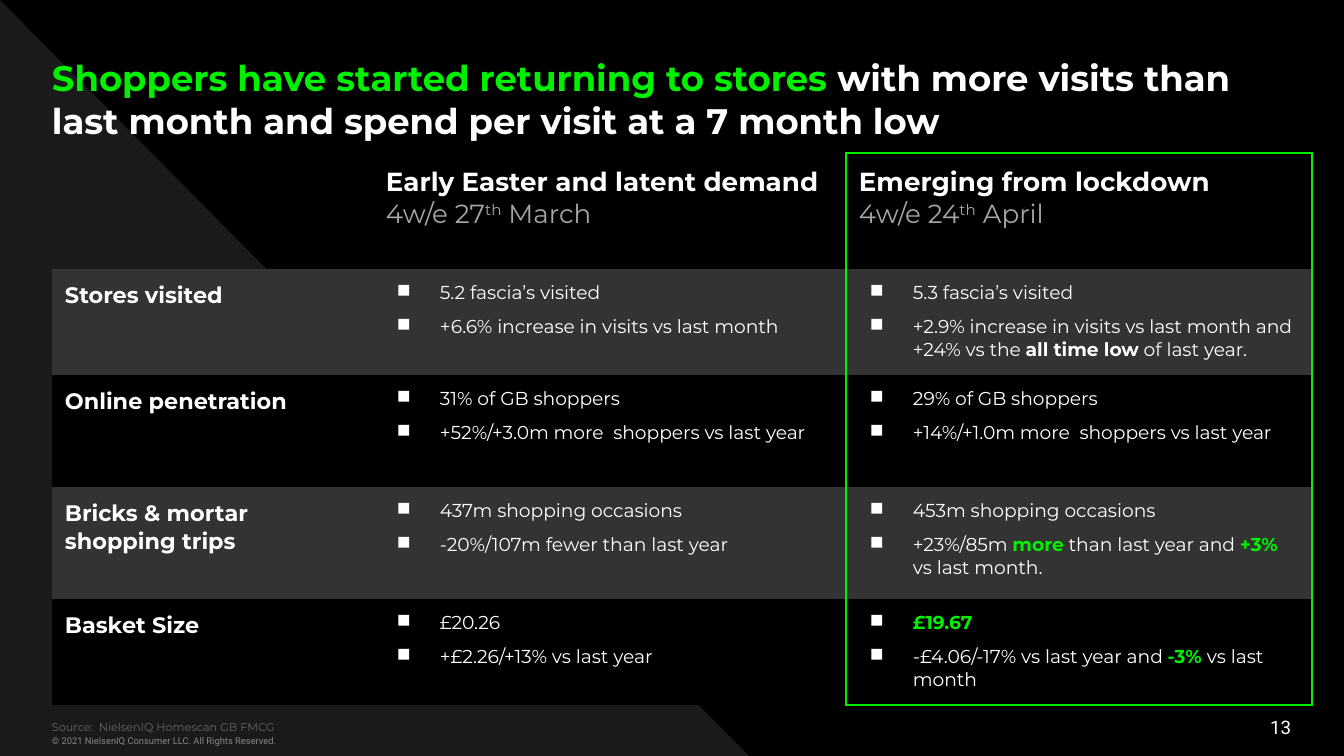
import lxml.etree
import pptx
import pptx.dml.color
import pptx.enum.shapes
import pptx.enum.text
import pptx.oxml.ns
import pptx.util

RGB = pptx.dml.color.RGBColor
BLACK = RGB(0x00, 0x00, 0x00)
WHITE = RGB(0xFF, 0xFF, 0xFF)
GREEN = RGB(0x00, 0xF0, 0x00)
CHARCOAL = RGB(0x1A, 0x1A, 0x1A)
BAND = RGB(0x33, 0x33, 0x33)
SOURCE_GREY = RGB(0x66, 0x66, 0x66)
COPYRIGHT_GREY = RGB(0x88, 0x88, 0x88)
DATE_GREY = RGB(0xA6, 0xA6, 0xA6)

ANCHOR = pptx.enum.text.MSO_ANCHOR
ALIGN = pptx.enum.text.PP_ALIGN
EMU_PER_PX = 914400 / 134.4
NO_STYLE_NO_GRID = "{2D5ABB26-0587-4C30-8999-92F81FD0307C}"

STYLES = {
    "title": {"name": "Montserrat", "size": 19, "bold": True, "color": WHITE},
    "title green": {"name": "Montserrat", "size": 19, "bold": True, "color": GREEN},
    "heading": {"name": "Montserrat", "size": 14, "bold": True, "color": WHITE},
    "date": {"name": "Montserrat", "size": 14, "bold": False, "color": DATE_GREY},
    "ordinal": {"name": "Montserrat", "size": 14, "bold": False, "color": DATE_GREY,
                "baseline": 30000},
    "label": {"name": "Montserrat", "size": 12, "bold": True, "color": WHITE},
    "body": {"name": "Montserrat", "size": 10, "bold": False, "color": WHITE},
    "strong": {"name": "Montserrat", "size": 10, "bold": True, "color": WHITE},
    "green": {"name": "Montserrat", "size": 10, "bold": True, "color": GREEN},
    "source": {"name": "Montserrat", "size": 6, "color": SOURCE_GREY},
    "copyright": {"name": "Roboto", "size": 5, "color": COPYRIGHT_GREY},
    "number": {"name": "Roboto", "size": 10, "color": WHITE},
}

# Each text: place (left, top, width, height), vertical inset, anchor, alignment, spans
TEXTS = [
    ((52, 730, 745, 27), 7, ANCHOR.TOP, ALIGN.LEFT,
     [("© 2021 NielsenIQ Consumer LLC. All Rights Reserved.", "copyright")]),
    ((989, 707, 302, 40), 7, ANCHOR.MIDDLE, ALIGN.RIGHT, [("13", "number")]),
    ((52, 714, 1199, 27), 13, ANCHOR.BOTTOM, ALIGN.LEFT,
     [("Source:  NielsenIQ Homescan GB FMCG", "source")]),
    ((52, 43, 1239, 99), 13, ANCHOR.TOP, ALIGN.LEFT,
     [("Shoppers have started returning to stores ", "title green"),
      ("with more visits than last month and spend per visit at a 7 month low", "title")]),
]

PERIODS = [
    ("Early Easter and latent demand", "4w/e 27", " March"),
    ("Emerging from lockdown", "4w/e 24", " April"),
]

# Each measure: label, bullets for the first period, bullets for the second
MEASURES = [
    ("Stores visited",
     [[("5.2 fascia’s visited", "body")],
      [("+6.6% increase in visits vs last month", "body")]],
     [[("5.3 fascia’s visited", "body")],
      [("+2.9% increase in visits vs last month and +24% vs the ", "body"),
       ("all time low", "strong"), (" of last year.", "body")]]),
    ("Online penetration",
     [[("31% of GB shoppers", "body")],
      [("+52%/+3.0m more  shoppers vs last year", "body")]],
     [[("29% of GB shoppers", "body")],
      [("+14%/+1.0m more  shoppers vs last year", "body")]]),
    ("Bricks & mortar shopping trips",
     [[("437m shopping occasions", "body")],
      [("-20%/107m fewer than last year", "body")]],
     [[("453m shopping occasions", "body")],
      [("+23%/85m ", "body"), ("more", "green"), (" than last year and ", "body"),
       ("+3% ", "green"), ("vs last month.", "body")]]),
    ("Basket Size",
     [[("£20.26", "body")], [("+£2.26/+13% vs last year", "body")]],
     [[("£19.67", "green")],
      [("-£4.06/-17% vs last year and ", "body"), ("-3% ", "green"),
       ("vs last month", "body")]]),
]

TABLE_LEFT, TABLE_TOP = 52, 153
COLUMN_WIDTHS = [321, 473, 466]
ROW_HEIGHTS = [116, 106, 112, 112, 106]


def px(length):
    return pptx.util.Emu(round(length * EMU_PER_PX))


def add_child(parent, tag, **attributes):
    return lxml.etree.SubElement(parent, pptx.oxml.ns.qn(tag), attributes)


def add_spans(para, spans):
    for text, style in spans:
        span = para.add_run()
        span.text = text
        for key, value in STYLES[style].items():
            if key == "color":
                span.font.color.rgb = value
            elif key == "baseline":
                span._r.get_or_add_rPr().set("baseline", str(value))
            else:
                setattr(span.font, key, pptx.util.Pt(value) if key == "size" else value)


def add_text(slide, place, inset, anchor, align, spans):
    frame = slide.shapes.add_textbox(*map(px, place)).text_frame
    layout = {"word_wrap": True, "vertical_anchor": anchor, "margin_left": 0,
              "margin_right": 0, "margin_top": px(inset), "margin_bottom": px(inset)}
    for key, value in layout.items():
        setattr(frame, key, value)
    frame.paragraphs[0].alignment = align
    add_spans(frame.paragraphs[0], spans)


def add_bullet(para):
    properties = para._p.get_or_add_pPr()
    properties.set("marL", str(px(54)))
    properties.set("indent", str(px(-43)))
    color = add_child(properties, "a:buClr")
    add_child(color, "a:srgbClr", val=str(WHITE))
    add_child(properties, "a:buChar", char="■")


def fill_cell(cell, paragraphs, bulleted):
    for side in ("left", "right", "top", "bottom"):
        setattr(cell, f"margin_{side}", px(13))
    frame = cell.text_frame
    for index, spans in enumerate(paragraphs):
        para = frame.add_paragraph() if index else frame.paragraphs[0]
        if bulleted:
            add_bullet(para)
            if index:
                para.space_before = pptx.util.Pt(6)
        add_spans(para, spans)


def add_borders(cell, sides):
    """Draw green lines on the given sides, ordered as in L, R, T, B."""
    properties = cell._tc.get_or_add_tcPr()
    for side in sides:
        line = add_child(properties, f"a:ln{side}", w=str(pptx.util.Pt(1)))
        add_child(add_child(line, "a:solidFill"), "a:srgbClr", val=str(GREEN))


def add_comparison(slide):
    header = [[]] + [
        [[(name, "heading")], [(date, "date"), ("th", "ordinal"), (month, "date")]]
        for name, date, month in PERIODS]
    rows = [header] + [[[[(label, "label")]], first, second]
                       for label, first, second in MEASURES]
    frame = slide.shapes.add_table(
        len(rows), len(COLUMN_WIDTHS), px(TABLE_LEFT), px(TABLE_TOP),
        px(sum(COLUMN_WIDTHS)), px(sum(ROW_HEIGHTS)))
    table = frame.table
    table.first_row = table.horz_banding = False
    table._tbl.tblPr.find(pptx.oxml.ns.qn("a:tableStyleId")).text = NO_STYLE_NO_GRID
    for column, width in zip(table.columns, COLUMN_WIDTHS):
        column.width = px(width)
    last = len(rows) - 1
    for r, cells in enumerate(rows):
        table.rows[r].height = px(ROW_HEIGHTS[r])
        highlight = "LR" + ("T" if r == 0 else "") + ("B" if r == last else "")
        for c, paragraphs in enumerate(cells):
            cell = table.cell(r, c)
            fill_cell(cell, paragraphs, bulleted=r > 0 and c > 0)
            add_borders(cell, ("", "R", highlight)[c])
            if r == 0:
                cell.fill.background()
            else:
                cell.fill.solid()
                cell.fill.fore_color.rgb = BAND if r % 2 else BLACK


def main():
    deck = pptx.Presentation()
    deck.slide_width, deck.slide_height = px(1344), px(756)
    slide = deck.slides.add_slide(deck.slide_layouts[6])
    slide.background.fill.solid()
    slide.background.fill.fore_color.rgb = BLACK
    corner = slide.shapes.add_shape(
        pptx.enum.shapes.MSO_SHAPE.RIGHT_TRIANGLE, 0, 0, px(751), px(758))
    corner.shadow.inherit = False
    corner.fill.solid()
    corner.fill.fore_color.rgb = CHARCOAL
    corner.line.fill.background()
    for text in TEXTS:
        add_text(slide, *text)
    add_comparison(slide)
    deck.save("out.pptx")


if __name__ == "__main__":
    main()
